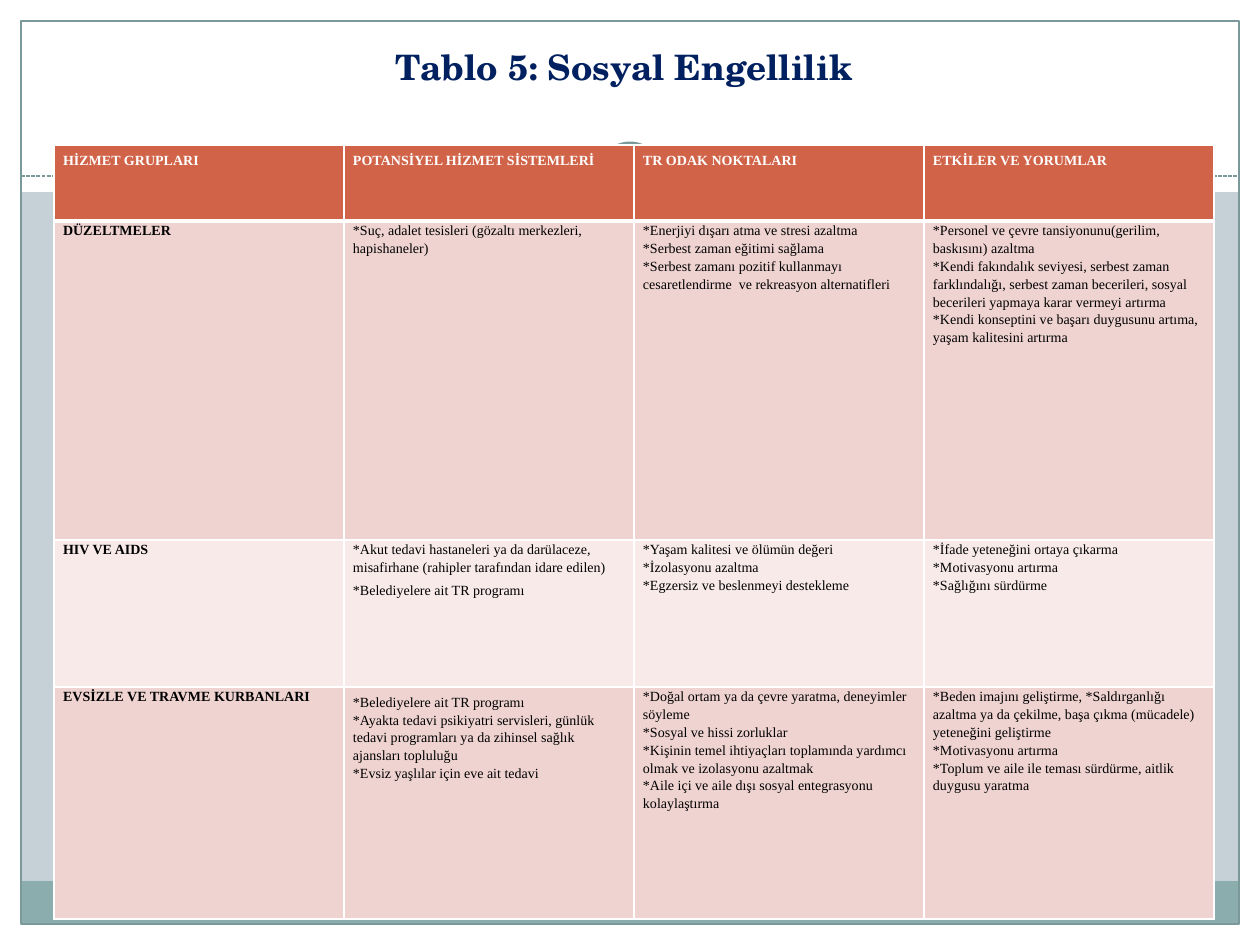
from dataclasses import dataclass
from typing import Optional

from lxml import etree
from pptx import Presentation
from pptx import util as u
from pptx.dml.color import RGBColor
from pptx.enum import dml, shapes, text
from pptx.oxml.ns import qn

EMU_PER_PX = 914400 / 126
WIDTH, HEIGHT = 1260, 945
MARGIN = 21
BODY_FONT = "Times New Roman"
TITLE_FONT = "TeX Gyre Schola"
COLORS = {
    "background": "C5D1D7",
    "white": "FFFFFF",
    "footer": "8CADAE",
    "rule": "7C999A",
    "title": "002060",
    "header": "D16349",
    "dark band": "EED3D0",
    "light band": "F7EAE9",
    "text": "000000",
}

PROGRAM = "*Belediyelere ait TR programı"
COLUMN_WIDTHS = [290] * 4
ROW_HEIGHTS = [76, 319, 147, 232]
ROWS = [
    ["HİZMET GRUPLARI", "POTANSİYEL HİZMET SİSTEMLERİ", "TR ODAK NOKTALARI", "ETKİLER VE YORUMLAR"],
    [
        "DÜZELTMELER",
        "*Suç, adalet tesisleri (gözaltı merkezleri, hapishaneler)",
        "*Enerjiyi dışarı atma ve stresi azaltma\n"
        "*Serbest zaman eğitimi sağlama\n"
        "*Serbest zamanı pozitif kullanmayı cesaretlendirme  ve rekreasyon alternatifleri",
        "*Personel ve çevre tansiyonunu(gerilim, baskısını) azaltma\n"
        "*Kendi fakındalık seviyesi, serbest zaman farklındalığı, serbest zaman becerileri, "
        "sosyal becerileri yapmaya karar vermeyi artırma\n"
        "*Kendi konseptini ve başarı duygusunu artıma, yaşam kalitesini artırma",
    ],
    [
        "HIV VE AIDS",
        "*Akut tedavi hastaneleri ya da darülaceze, misafirhane (rahipler tarafından idare edilen)\n"
        + PROGRAM,
        "*Yaşam kalitesi ve ölümün değeri\n*İzolasyonu azaltma\n*Egzersiz ve beslenmeyi destekleme",
        "*İfade yeteneğini ortaya çıkarma\n*Motivasyonu artırma\n*Sağlığını sürdürme",
    ],
    [
        "EVSİZLE VE TRAVME KURBANLARI",
        PROGRAM + "\n"
        "*Ayakta tedavi psikiyatri servisleri, günlük tedavi programları ya da zihinsel sağlık "
        "ajansları topluluğu\n"
        "*Evsiz yaşlılar için eve ait tedavi",
        "*Doğal ortam ya da çevre yaratma, deneyimler söyleme\n"
        "*Sosyal ve hissi zorluklar\n"
        "*Kişinin temel ihtiyaçları toplamında yardımcı olmak ve izolasyonu azaltmak\n"
        "*Aile içi ve aile dışı sosyal entegrasyonu kolaylaştırma",
        "*Beden imajını geliştirme, *Saldırganlığı azaltma ya da çekilme, başa çıkma (mücadele) "
        "yeteneğini geliştirme\n"
        "*Motivasyonu artırma\n"
        "*Toplum ve aile ile teması sürdürme, aitlik duygusu yaratma",
    ],
]


@dataclass
class Panel:
    left: int
    top: int
    width: int
    height: int
    fill: Optional[str] = None
    line_width: float = 0
    kind: shapes.MSO_SHAPE = shapes.MSO_SHAPE.RECTANGLE


FRAME_PANELS = [
    Panel(0, HEIGHT - MARGIN, WIDTH, MARGIN, "white"),
    Panel(0, 0, WIDTH, 192, "white"),
    Panel(0, 0, MARGIN, HEIGHT, "white"),
    Panel(WIDTH - MARGIN, 0, MARGIN, HEIGHT, "white"),
    Panel(MARGIN, 881, WIDTH - 2 * MARGIN, 43, "footer"),
    Panel(MARGIN, MARGIN, WIDTH - 2 * MARGIN, HEIGHT - 2 * MARGIN, line_width=0.75),
]
MEDALLION = [
    Panel(588, 132, 84, 84, "white", kind=shapes.MSO_SHAPE.OVAL),
    Panel(601, 145, 58, 58, "white", 4, shapes.MSO_SHAPE.OVAL),
]


def px(length: int) -> u.Emu:
    return u.Emu(round(length * EMU_PER_PX))


def color(name: str) -> RGBColor:
    return RGBColor.from_string(COLORS[name])


def draw_panel(page, panel: Panel) -> None:
    place = map(px, (panel.left, panel.top, panel.width, panel.height))
    box = page.shapes.add_shape(panel.kind, *place)
    box.shadow.inherit = False
    if panel.fill:
        box.fill.solid()
        box.fill.fore_color.rgb = color(panel.fill)
    else:
        box.fill.background()
    if panel.line_width:
        box.line.color.rgb = color("rule")
        box.line.width = u.Pt(panel.line_width)
    else:
        box.line.fill.background()


def draw_dashed_rule(page, top: int) -> None:
    rule = page.shapes.add_connector(
        shapes.MSO_CONNECTOR.STRAIGHT, px(MARGIN), px(top), px(WIDTH - MARGIN), px(top))
    rule.line.color.rgb = color("rule")
    rule.line.width = u.Pt(0.75)
    rule.line.dash_style = dml.MSO_LINE.SQUARE_DOT
    etree.SubElement(rule._element.spPr, qn("a:effectLst"))


def format_span(span, font: str, size: int, tint: str, bold: bool) -> None:
    span.font.name = font
    span.font.size = u.Pt(size)
    span.font.color.rgb = color(tint)
    span.font.bold = bold


def write_title(page, wording: str) -> None:
    """Fill the title placeholder and bring it in front of the panels."""
    title = page.shapes.title
    page.shapes._spTree.append(title._element)
    title.left, title.top, title.width, title.height = map(px, (42, 32, 1176, 104))
    frame = title.text_frame
    frame.text = wording
    frame.word_wrap = True
    frame.auto_size = text.MSO_AUTO_SIZE.NONE
    frame.vertical_anchor = text.MSO_ANCHOR.BOTTOM
    frame.margin_right = px(24)
    frame.margin_bottom = px(48)
    para = frame.paragraphs[0]
    para.alignment = text.PP_ALIGN.CENTER
    format_span(para.runs[0], TITLE_FONT, 20, "title", True)


def set_borders(cell, below: int) -> None:
    """Give the cell white borders, with the lower one 'below' points wide."""
    properties = cell._tc.get_or_add_tcPr()
    for index, (side, points) in enumerate(zip("LRTB", (1, 1, 1, below))):
        border = etree.Element(qn(f"a:ln{side}"), w=str(u.Pt(points)))
        fill = etree.SubElement(border, qn("a:solidFill"))
        etree.SubElement(fill, qn("a:srgbClr"), val=COLORS["white"])
        properties.insert(index, border)


def fill_cell(cell, wording: str, row: int, column: int) -> None:
    header = row == 0
    cell.margin_left = cell.margin_right = px(9)
    cell.margin_top = cell.margin_bottom = 0
    cell.fill.solid()
    cell.fill.fore_color.rgb = color("header" if header else "dark band" if row % 2 else "light band")
    set_borders(cell, 3 if header else 1)
    cell.text_frame.text = wording
    for para in cell.text_frame.paragraphs:
        para.line_spacing = 1.5 if header or para.text == PROGRAM else 1.15
        tint = "white" if header else "text"
        format_span(para.runs[0], BODY_FONT, 8, tint, header or column == 0)


def draw_table(page, left: int, top: int) -> None:
    size = px(sum(COLUMN_WIDTHS)), px(sum(ROW_HEIGHTS))
    table = page.shapes.add_table(
        len(ROW_HEIGHTS), len(COLUMN_WIDTHS), px(left), px(top), *size).table
    for column, width in zip(table.columns, COLUMN_WIDTHS):
        column.width = px(width)
    for row, height in zip(table.rows, ROW_HEIGHTS):
        row.height = px(height)
    for row, wordings in enumerate(ROWS):
        for column, wording in enumerate(wordings):
            fill_cell(table.cell(row, column), wording, row, column)


def main() -> None:
    deck = Presentation()
    deck.slide_width, deck.slide_height = px(WIDTH), px(HEIGHT)
    page = deck.slides.add_slide(deck.slide_layouts[5])
    page.background.fill.solid()
    page.background.fill.fore_color.rgb = color("background")
    for panel in FRAME_PANELS:
        draw_panel(page, panel)
    draw_dashed_rule(page, 176)
    for panel in MEDALLION:
        draw_panel(page, panel)
    write_title(page, "Tablo 5: Sosyal Engellilik")
    draw_table(page, 54, 145)
    deck.save("out.pptx")


if __name__ == "__main__":
    main()
